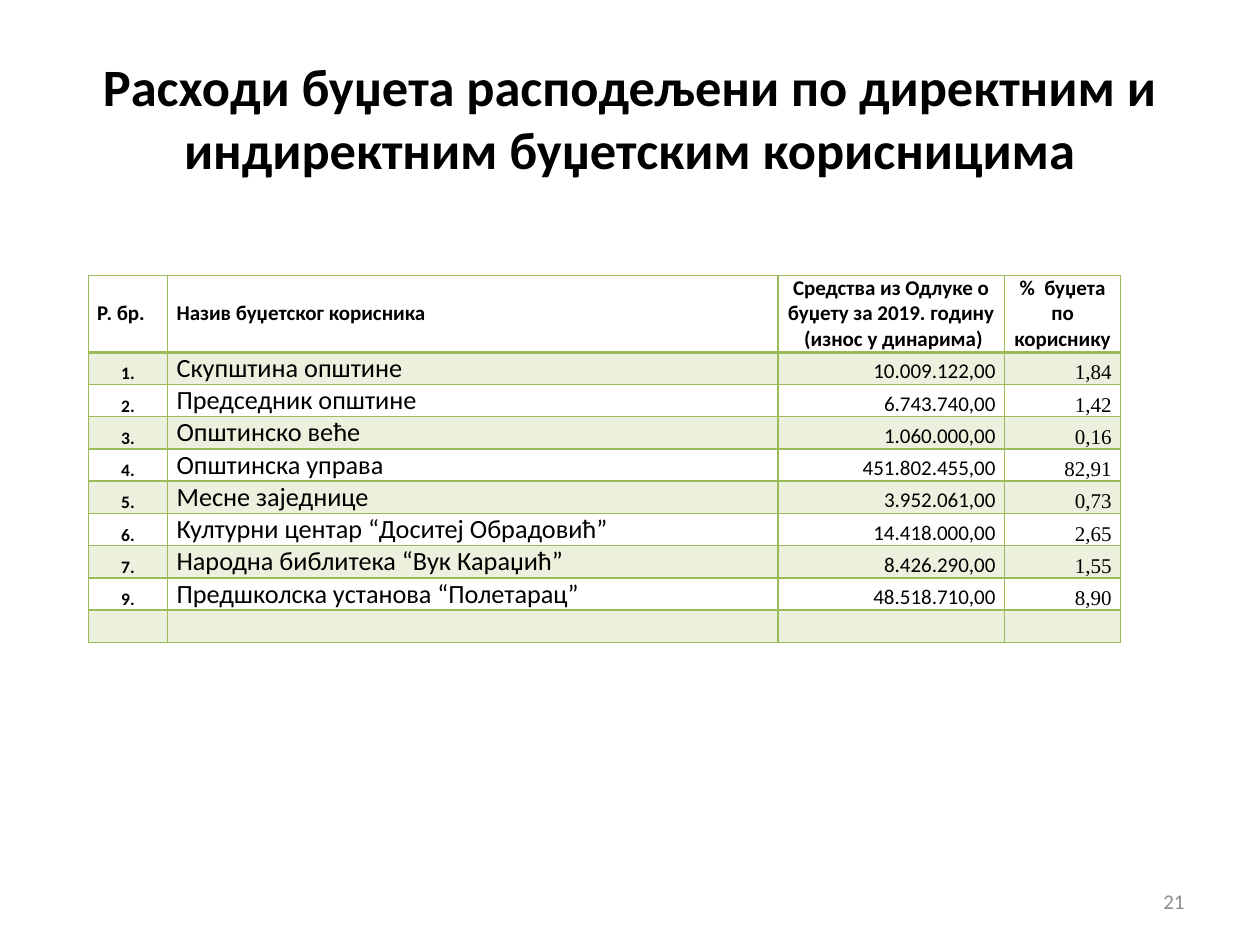
from lxml import etree
from pptx import Presentation
from pptx.dml.color import RGBColor
from pptx.enum import text
from pptx.oxml.ns import qn
from pptx.util import Cm, Pt

GREEN, BLACK, GREY = "9BBB59", "000000", "8C8C8C"
LEFT, CENTER, RIGHT = (text.PP_ALIGN.LEFT, text.PP_ALIGN.CENTER,
                       text.PP_ALIGN.RIGHT)
MIDDLE, BOTTOM = text.MSO_ANCHOR.MIDDLE, text.MSO_ANCHOR.BOTTOM

COLUMN_WIDTHS = [1.6, 12.3, 4.57, 2.34]
HEADER_HEIGHT, ROW_HEIGHT = 1.55, 0.65
HEADER = ["Р. бр.", "Назив буџетског корисника",
          "Средства из Одлуке о буџету за 2019. годину  (износ у динарима)",
          "%  буџета по кориснику"]
USERS = [
    ["1.", "Скупштина општине", "10.009.122,00", "1,84"],
    ["2.", "Председник општине", "6.743.740,00", "1,42"],
    ["3.", "Општинско веће", "1.060.000,00", "0,16"],
    ["4.", "Општинска управа", "451.802.455,00", "82,91"],
    ["5.", "Месне заједнице", "3.952.061,00", "0,73"],
    ["6.", "Културни центар “Доситеј Обрадовић”", "14.418.000,00", "2,65"],
    ["7.", "Народна библитека “Вук Караџић”", "8.426.290,00", "1,55"],
    ["9.", "Предшколска установа “Полетарац”", "48.518.710,00", "8,90"],
    ["", "", "", ""],
]
HEADER_FORMAT = {"size": Pt(12), "bold": True, "name": "Calibri"}
HEADER_ALIGN = [LEFT, LEFT, CENTER, CENTER]
BODY_FORMATS = [
    {"size": Pt(10), "bold": True, "name": "Calibri"},
    {"size": Pt(15), "bold": False, "name": "Calibri"},
    {"size": Pt(12), "bold": False, "name": "Calibri"},
    {"size": Pt(12), "bold": False, "name": "Times New Roman"},
]
BODY_ALIGN = [CENTER, LEFT, RIGHT, RIGHT]


def rgb(color):
    return RGBColor.from_string(color)


def write(p, words, align, font, color=BLACK):
    p.alignment = align
    if not words:
        etree.SubElement(p._p, qn("a:endParaRPr"), sz="1000")
        return
    r = p.add_run()
    r.text = words
    for key, value in font.items():
        setattr(r.font, key, value)
    r.font.color.rgb = rgb(color)


def add_text(s, box, words, align, font, color=BLACK):
    tf = s.shapes.add_textbox(*map(Cm, box)).text_frame
    tf.word_wrap = True
    tf.vertical_anchor = MIDDLE
    write(tf.paragraphs[0], words, align, font, color)


def set_borders(cell, **widths):
    """Draw the cell's sides, given in points as L, R, T and B."""
    tc_pr = cell._tc.get_or_add_tcPr()
    for side, width in widths.items():
        ln = etree.SubElement(tc_pr, qn(f"a:ln{side}"), w=str(Pt(width)))
        fill = etree.SubElement(ln, qn("a:solidFill"))
        etree.SubElement(fill, qn("a:srgbClr"), val=GREEN)


def tint(cell):
    cell.fill.solid()
    cell.fill.fore_color.rgb = rgb(GREEN)
    color = cell._tc.tcPr.find(f"{qn('a:solidFill')}/{qn('a:srgbClr')}")
    etree.SubElement(color, qn("a:alpha"), val="20000")


def fill_cell(cell, words, row, col):
    is_header = row == 0
    margins = {"margin_left": Cm(0.18), "margin_right": Cm(0.18),
               "margin_top": 0, "margin_bottom": 0,
               "vertical_anchor": MIDDLE if is_header else BOTTOM}
    for key, value in margins.items():
        setattr(cell, key, value)
    set_borders(cell, L=1, R=1, T=2 if row == 1 else 1,
                B=2 if is_header else 1)
    if row % 2:
        tint(cell)
    else:
        cell.fill.background()
    align = (HEADER_ALIGN if is_header else BODY_ALIGN)[col]
    font = HEADER_FORMAT if is_header else BODY_FORMATS[col]
    write(cell.text_frame.paragraphs[0], words, align, font)


def add_budget_table(s, left, top):
    rows = [HEADER] + USERS
    heights = [HEADER_HEIGHT] + [ROW_HEIGHT] * len(USERS)
    table = s.shapes.add_table(
        len(rows), len(HEADER), Cm(left), Cm(top),
        Cm(sum(COLUMN_WIDTHS)), Cm(sum(heights))).table
    table.first_row = table.horz_banding = False
    for column, width in zip(table.columns, COLUMN_WIDTHS):
        column.width = Cm(width)
    for i, (words, height) in enumerate(zip(rows, heights)):
        table.rows[i].height = Cm(height)
        for j, word in enumerate(words):
            fill_cell(table.cell(i, j), word, i, j)


def main():
    prs = Presentation()
    prs.slide_width, prs.slide_height = Cm(25.4), Cm(19.05)
    s = prs.slides.add_slide(prs.slide_layouts[6])
    add_text(s, (1.27, 0.76, 22.86, 3.18),
             "Расходи буџета расподељени по директним и "
             "индиректним буџетским корисницима", CENTER,
             {"size": Pt(30), "bold": True, "name": "Calibri"})
    add_budget_table(s, 1.78, 5.55)
    add_text(s, (18.2, 17.66, 5.93, 1.01), "21", RIGHT,
             {"size": Pt(12), "name": "Calibri"}, GREY)
    prs.save("out.pptx")


if __name__ == "__main__":
    main()
